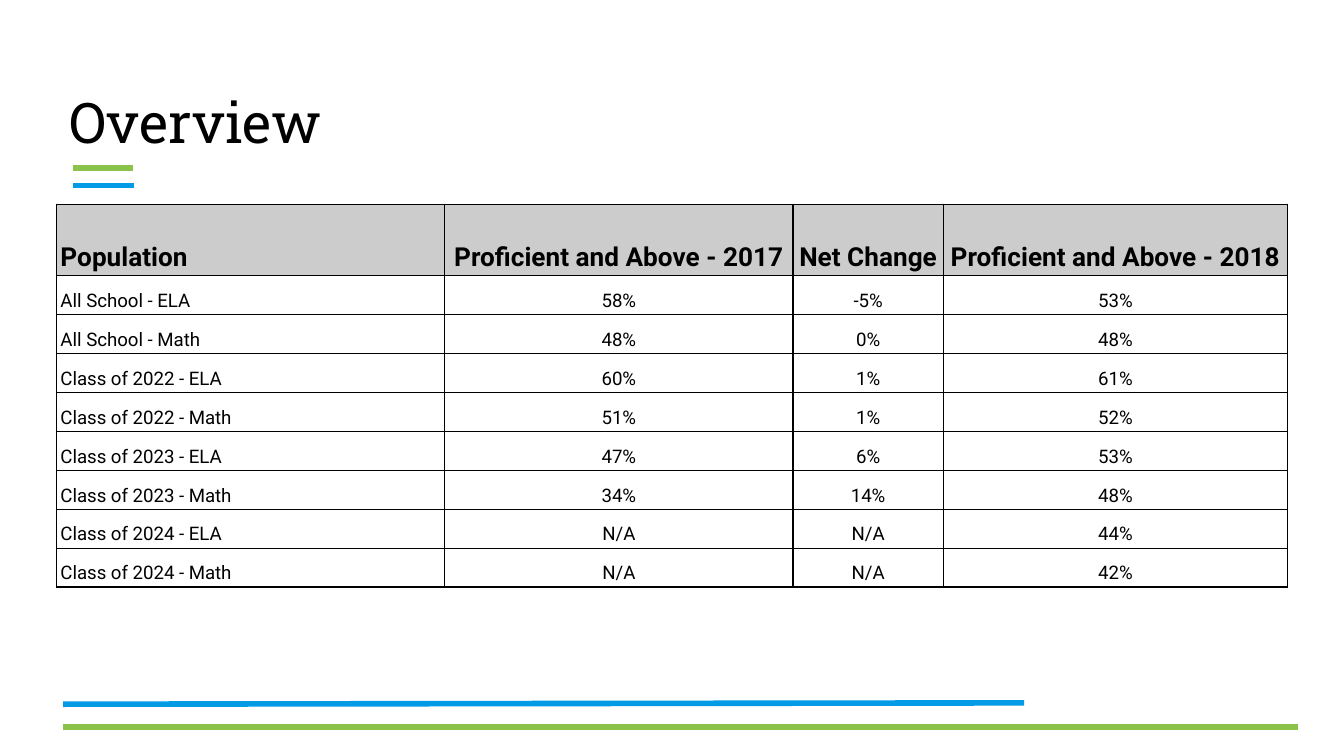
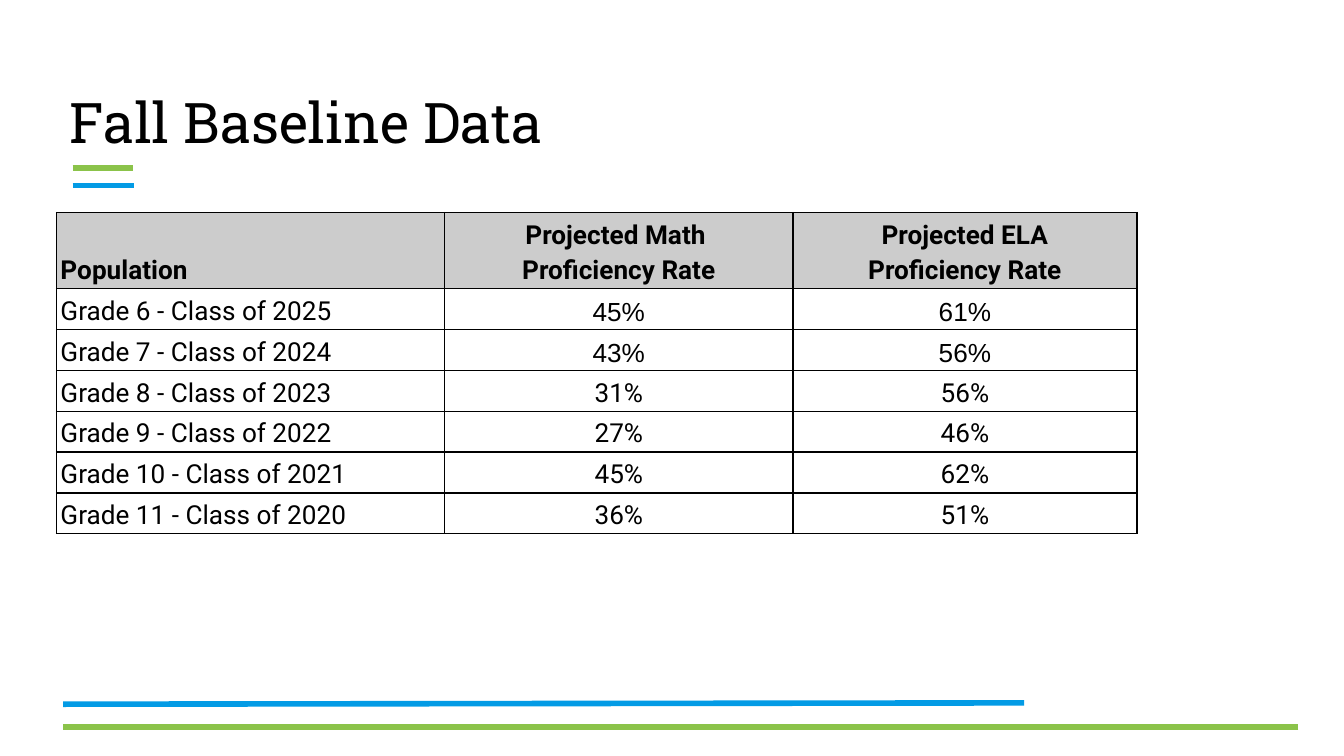
import pptx
import pptx.dml.color
import pptx.enum.shapes
import pptx.enum.text
import pptx.oxml.ns
import pptx.util
from lxml import etree
from pptx.util import Inches

# Content
OVERVIEW = {
    "title": "Overview",
    "top": 1.52,
    "widths": [2.89, 2.59, 1.12, 2.56],
    "header": ["Population", "Proficient and Above - 2017", "Net Change",
               "Proficient and Above - 2018"],
    "rows": [
        ["All School - ELA", "58%", "-5%", "53%"],
        ["All School - Math", "48%", "0%", "48%"],
        ["Class of 2022 - ELA", "60%", "1%", "61%"],
        ["Class of 2022 - Math", "51%", "1%", "52%"],
        ["Class of 2023 - ELA", "47%", "6%", "53%"],
        ["Class of 2023 - Math", "34%", "14%", "48%"],
        ["Class of 2024 - ELA", "N/A", "N/A", "44%"],
        ["Class of 2024 - Math", "N/A", "N/A", "42%"],
    ],
    "size": 10,
    "value_spacing": 1.15,
    "white_column": 2,
    "arial_rows": 0,
}
BASELINE = {
    "title": "Fall Baseline Data",
    "top": 1.58,
    "widths": [2.89, 2.59, 2.56],
    "header": ["Population", "Projected Math \nProficiency Rate",
               "Projected ELA\nProficiency Rate"],
    "rows": [
        ["Grade 6 - Class of 2025", "45%", "61%"],
        ["Grade 7 - Class of 2024", "43%", "56%"],
        ["Grade 8 - Class of 2023", "31%", "56%"],
        ["Grade 9 - Class of 2022", "27%", "46%"],
        ["Grade 10 - Class of 2021", "45%", "62%"],
        ["Grade 11 - Class of 2020", "36%", "51%"],
    ],
    "size": 14,
    "value_spacing": 1.0,
    "white_column": None,
    "arial_rows": 2,  # leading rows whose values are set in Arial
}

# Shared look
SLIDE_WIDTH = Inches(10)
SLIDE_HEIGHT = SLIDE_WIDTH * 9 // 16
BLUE, GREEN, BLACK, GRAY, WHITE = "039BE5", "8BC34A", "000000", "CCCCCC", "FFFFFF"
RULES = [  # start, end, colour
    ((0.54, 1.38), (1, 1.38), BLUE),
    ((7.62, 5.23), (0.47, 5.24), BLUE),
    ((0.54, 1.25), (0.99, 1.25), GREEN),
    ((9.66, 5.41), (0.47, 5.41), GREEN),
]
LEFT = 0.42
HEADER_HEIGHT, ROW_HEIGHT = 0.53, 0.29
ALIGN = pptx.enum.text.PP_ALIGN
BOTTOM = pptx.enum.text.MSO_ANCHOR.BOTTOM


def rgb(hex_colour):
    return pptx.dml.color.RGBColor.from_string(hex_colour)


def style_font(font, name, size, bold=False):
    font.name, font.size, font.bold = name, pptx.util.Pt(size), bold
    font.color.rgb = rgb(BLACK)


def add_rules(slide):
    for start, end, colour in RULES:
        rule = slide.shapes.add_connector(
            pptx.enum.shapes.MSO_CONNECTOR.STRAIGHT,
            *(Inches(value) for value in start + end))
        rule.line.color.rgb = rgb(colour)
        rule.line.width = pptx.util.Pt(3)
        properties = rule._element.spPr
        etree.SubElement(properties, pptx.oxml.ns.qn("a:effectLst"))


def set_title(slide, text):
    title = slide.shapes.title
    title.left, title.top = Inches(LEFT), Inches(0.5)
    title.width, title.height = Inches(9.15), Inches(0.75)
    frame = title.text_frame
    frame.text = text
    frame.auto_size = pptx.enum.text.MSO_AUTO_SIZE.NONE
    frame.vertical_anchor = BOTTOM
    frame.margin_left = frame.margin_right = Inches(0.1)
    frame.margin_top = frame.margin_bottom = Inches(0.1)
    frame.paragraphs[0].alignment = ALIGN.LEFT
    style_font(frame.paragraphs[0].font, "Roboto Slab", 30)


def add_borders(cell):
    qn = pptx.oxml.ns.qn
    properties = cell._tc.get_or_add_tcPr()
    for side in ("lnL", "lnR", "lnT", "lnB"):
        border = etree.SubElement(properties, qn("a:" + side),
                                  w=str(pptx.util.Pt(0.75)))
        fill = etree.SubElement(border, qn("a:solidFill"))
        etree.SubElement(fill, qn("a:srgbClr"), val=BLACK)


def fill_cell(cell, text, colour, font_name, size, bold, spacing, alignment):
    cell.text = text
    cell.vertical_anchor = BOTTOM
    cell.margin_left = cell.margin_right = Inches(0.03)
    cell.margin_top = cell.margin_bottom = Inches(0.02)
    add_borders(cell)
    if colour:
        cell.fill.solid()
        cell.fill.fore_color.rgb = rgb(colour)
    else:
        cell.fill.background()
    for paragraph in cell.text_frame.paragraphs:
        paragraph.alignment = alignment
        paragraph.line_spacing = spacing
        style_font(paragraph.font, font_name, size, bold)


def add_results(slide, content):
    rows = [content["header"]] + content["rows"]
    widths = content["widths"]
    heights = [HEADER_HEIGHT] + [ROW_HEIGHT] * len(content["rows"])
    results = slide.shapes.add_table(
        len(rows), len(widths), Inches(LEFT), Inches(content["top"]),
        Inches(sum(widths)), Inches(sum(heights))).table
    results.first_row = results.horz_banding = False
    for column, width in zip(results.columns, widths):
        column.width = Inches(width)
    for row, height in zip(results.rows, heights):
        row.height = Inches(height)

    for r, row in enumerate(rows):
        for c, text in enumerate(row):
            is_header, is_label = r == 0, c == 0
            colour = (GRAY if is_header
                      else WHITE if c == content["white_column"] else None)
            in_arial = 1 <= r <= content["arial_rows"] and not is_label
            fill_cell(
                results.cell(r, c), text, colour,
                font_name="Arial" if in_arial else "Roboto",
                size=14 if is_header else content["size"],
                bold=is_header,
                spacing=1.15 if is_header or is_label else content["value_spacing"],
                alignment=ALIGN.LEFT if is_label else ALIGN.CENTER)


def main():
    deck = pptx.Presentation()
    deck.slide_width, deck.slide_height = SLIDE_WIDTH, SLIDE_HEIGHT
    title_only = deck.slide_layouts[5]
    for content in (OVERVIEW, BASELINE):
        slide = deck.slides.add_slide(title_only)
        add_rules(slide)
        set_title(slide, content["title"])
        add_results(slide, content)
    deck.save("out.pptx")


if __name__ == "__main__":
    main()
